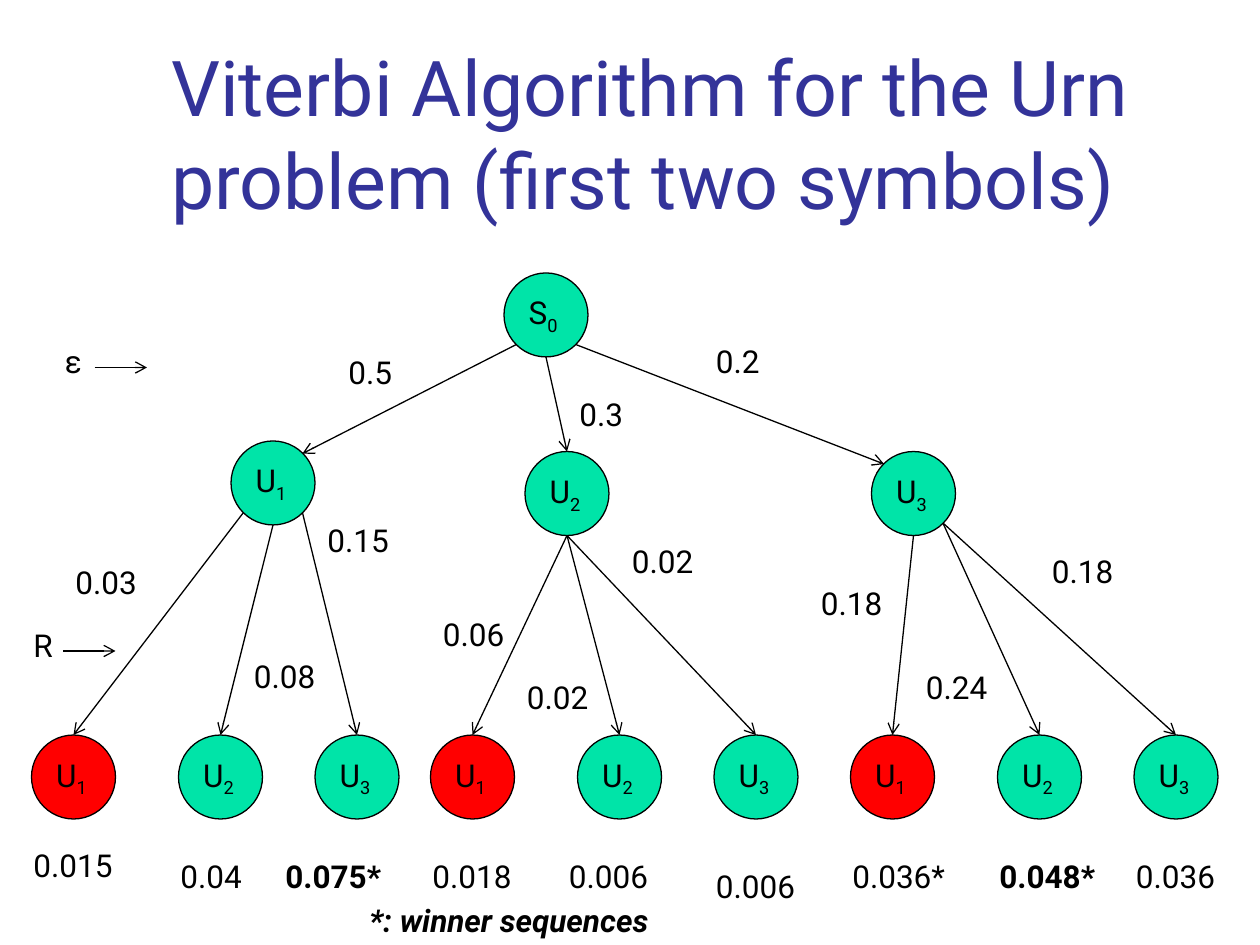
from lxml.etree import SubElement
from pptx import Presentation
from pptx.dml.color import RGBColor
from pptx.enum.shapes import MSO_CONNECTOR, MSO_SHAPE
from pptx.enum.text import MSO_ANCHOR, MSO_AUTO_SIZE, PP_ALIGN
from pptx.oxml.ns import qn
from pptx.util import Pt

PX = 7620  # EMU per px, 120 px to the inch
DIAMETER = 80
GREEN, RED, BLACK = "00E4A8", "FF0000", "000000"
# Points on a node's rim, as offsets from its top left corner
RIM = {"top": (40, 0), "top left": (12, 12), "top right": (68, 12),
       "bottom": (40, 80), "bottom left": (12, 68), "bottom right": (68, 68)}


def color(hex_code):
    return RGBColor.from_string(hex_code)


def style(paragraph, size=18, hex_code=BLACK):
    paragraph.alignment = PP_ALIGN.LEFT
    paragraph.font.name = "Roboto"
    paragraph.font.size = Pt(size)
    paragraph.font.color.rgb = color(hex_code)


prs = Presentation()
prs.slide_width, prs.slide_height = 1200 * PX, 900 * PX
slide = prs.slides.add_slide(prs.slide_layouts[5])
shapes = slide.shapes

title = shapes.title
title.left, title.top, title.width, title.height = 151 * PX, 28 * PX, 1022 * PX, 192 * PX
title.text_frame.text = "Viterbi Algorithm for the Urn problem (first two symbols)"
title.text_frame.vertical_anchor = MSO_ANCHOR.BOTTOM
title.text_frame.auto_size = MSO_AUTO_SIZE.NONE
style(title.text_frame.paragraphs[0], 44, "333399")

# Tree: each parent has its place, the rim points of its edge from the root,
# the left of its first leaf, and where the edges to its leaves begin
root = (480, 260)
parents = [
    ((220, 420), ("bottom left", "top right"), 30, ("bottom left", "bottom", "bottom right")),
    ((500, 430), ("bottom", "top"), 410, ("bottom", "bottom", "bottom")),
    ((830, 430), ("bottom right", "top left"), 810, ("bottom", "bottom right", "bottom right")),
]
leaf_top, leaf_offsets = 700, (0, 140, 270)

nodes = [("S", "0", root, GREEN)]
edges = []
for number, (place, (start, end), first_leaf, exits) in enumerate(parents, 1):
    nodes.append(("U", str(number), place, GREEN))
    edges.append((root, start, place, end))
    for leaf_number, (offset, exit_point) in enumerate(zip(leaf_offsets, exits), 1):
        leaf = (first_leaf + offset, leaf_top)
        nodes.append(("U", str(leaf_number), leaf, RED if leaf_number == 1 else GREEN))
        edges.append((place, exit_point, leaf, "top"))

for letter, subscript, (left, top), fill in nodes:
    node = shapes.add_shape(MSO_SHAPE.OVAL, left * PX, top * PX, DIAMETER * PX, DIAMETER * PX)
    node.shadow.inherit = False
    node.fill.solid()
    node.fill.fore_color.rgb = color(fill)
    node.line.color.rgb = color(BLACK)
    node.line.width = Pt(0.75)
    node.text_frame.vertical_anchor = MSO_ANCHOR.MIDDLE
    state = node.text_frame.paragraphs[0]
    style(state)
    state.add_run().text = letter
    index = state.add_run()
    index.text = subscript
    index.font._element.set("baseline", "-25000")

arrows = [(90, 350, 140, 350), (60, 620, 110, 620)]  # beside ε and R
for (x1, y1), start, (x2, y2), end in edges:
    (dx1, dy1), (dx2, dy2) = RIM[start], RIM[end]
    arrows.append((x1 + dx1, y1 + dy1, x2 + dx2, y2 + dy2))

for ends in arrows:
    arrow = shapes.add_connector(MSO_CONNECTOR.STRAIGHT, *(n * PX for n in ends))
    arrow.line.color.rgb = color(BLACK)
    arrow.line.width = Pt(0.75)
    SubElement(arrow.line._get_or_add_ln(), qn("a:tailEnd"), type="arrow")
    SubElement(arrow._element.spPr, qn("a:effectLst"))

# Text, left, top, width, bold, italic
labels = [
    # symbols
    ("ε", 50, 320, 40, False, False),
    ("R", 20, 590, 44, False, False),
    # edges from the root
    ("0.5", 320, 330, 100, False, False),
    ("0.3", 540, 370, 100, False, False),
    ("0.2", 670, 320, 100, False, False),
    # edges to the leaves
    ("0.03", 60, 530, 100, False, False),
    ("0.08", 230, 620, 100, False, False),
    ("0.15", 300, 490, 100, False, False),
    ("0.06", 410, 580, 100, False, False),
    ("0.02", 490, 640, 100, False, False),
    ("0.02", 590, 510, 100, False, False),
    ("0.18", 770, 550, 100, False, False),
    ("0.24", 870, 630, 100, False, False),
    ("0.18", 990, 520, 100, False, False),
    # sequence probabilities
    ("0.015", 20, 800, 100, False, False),
    ("0.04", 160, 810, 100, False, False),
    ("0.075*", 260, 810, 150, True, False),
    ("0.018", 400, 810, 100, False, False),
    ("0.006", 530, 810, 100, False, False),
    ("0.006", 670, 820, 100, False, False),
    ("0.036*", 800, 810, 120, False, False),
    ("0.048*", 940, 810, 130, True, False),
    ("0.036", 1070, 810, 100, False, False),
    ("*: winner sequences", 340, 852, 337, True, True),
]
for text, left, top, width, bold, italic in labels:
    label = shapes.add_textbox(left * PX, top * PX, width * PX, 48 * PX).text_frame
    label.word_wrap = True
    label.text = text
    style(label.paragraphs[0])
    label.paragraphs[0].font.bold = bold
    label.paragraphs[0].font.italic = italic

prs.save("out.pptx")
